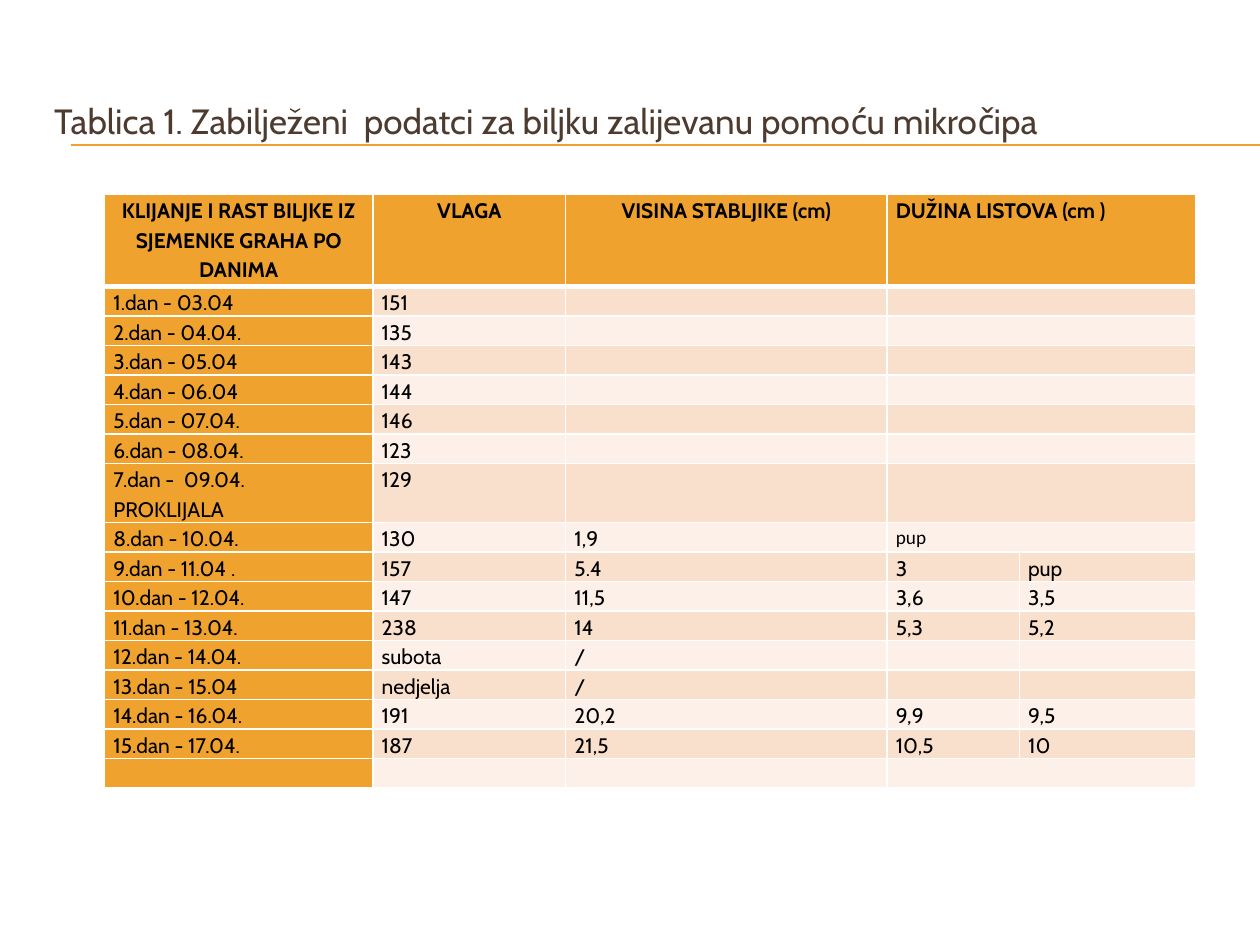
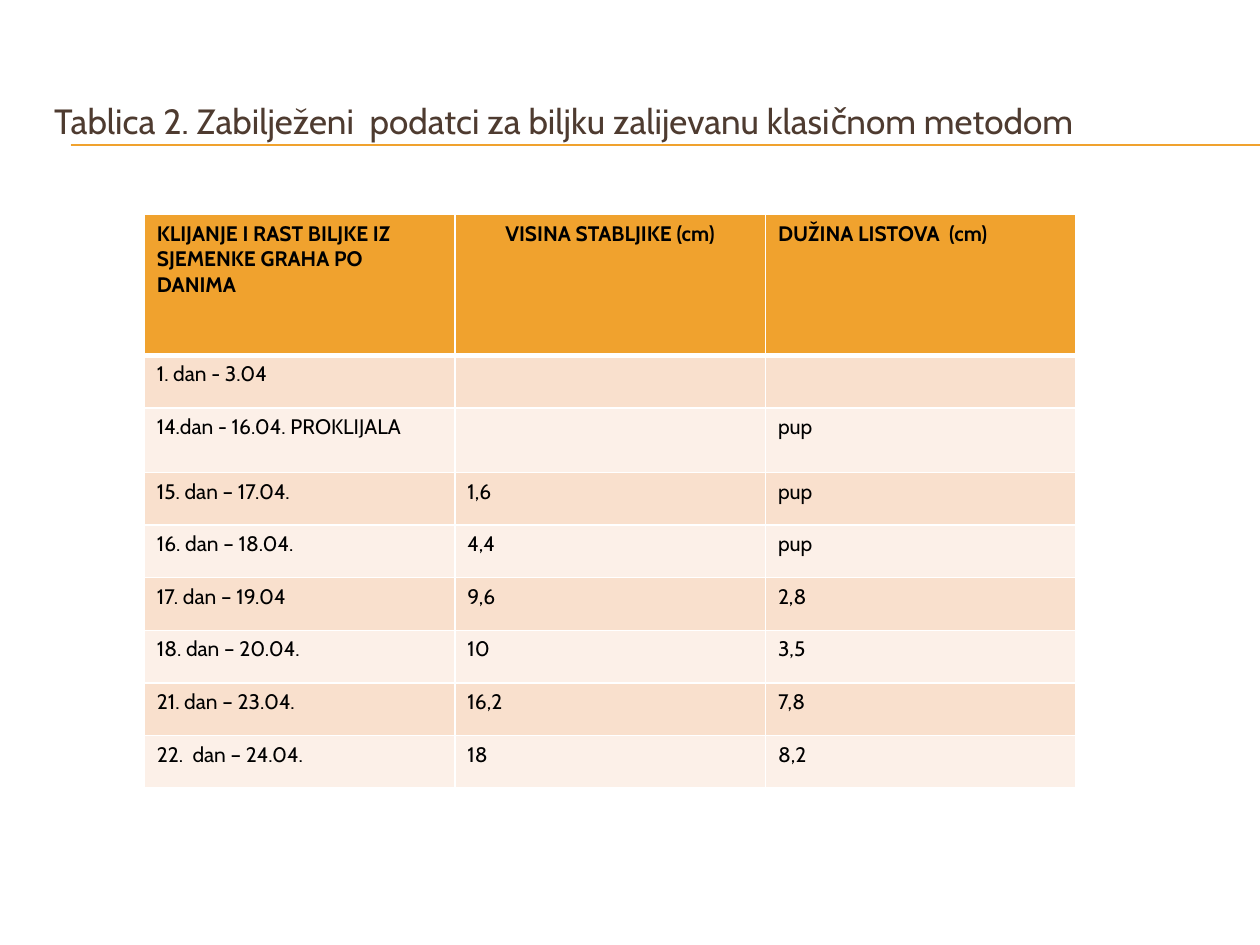
from dataclasses import dataclass

from lxml.etree import SubElement
from pptx import Presentation
from pptx.dml.color import RGBColor
from pptx.enum.shapes import MSO_CONNECTOR as Connector
from pptx.enum.text import MSO_ANCHOR as Anchor, PP_ALIGN as Align
from pptx.oxml.ns import qn
from pptx.util import Inches, Pt

WIDTH, HEIGHT = Inches(10), Inches(7.5)
TITLE_ONLY = 5


@dataclass(frozen=True)
class Theme:
    font: str = "Cabin"
    note_font: str = "Calibri"
    title_size: int = 20
    table_size: int = 12
    note_size: int = 11
    title: str = "4E3B30"
    text: str = "000000"
    accent: str = "F0A22E"
    bands: tuple = ("F9E0CD", "FCF0E8")
    border: str = "FFFFFF"
    border_width: float = 1
    header_rule: float = 3
    title_rule: float = 0.75


@dataclass(frozen=True)
class TableLook:
    """Place, columns and rows in percent of the slide; insets in inches."""
    left: float
    top: float
    columns: tuple
    rows: tuple
    inset: tuple
    line_spacing: float
    centred_headers: tuple
    accent_days: bool


THEME = Theme()

# Bean watered with the help of the microchip
WATERED_HEADER = ("KLIJANJE I RAST BILJKE IZ SJEMENKE GRAHA PO DANIMA", "VLAGA",
                  "VISINA STABLJIKE (cm)", "DUŽINA LISTOVA (cm )")
WATERED_DAYS = [
    ("1.dan - 03.04", "151", "", ""),
    ("2.dan - 04.04.", "135", "", ""),
    ("3.dan - 05.04", "143", "", ""),
    ("4.dan - 06.04", "144", "", ""),
    ("5.dan - 07.04.", "146", "", ""),
    ("6.dan - 08.04.", "123", "", ""),
    ("7.dan -  09.04.  PROKLIJALA", "129", "", ""),
    ("8.dan - 10.04.", "130", "1,9", "pup"),
    ("9.dan - 11.04 .", "157", "5.4", "3", "pup"),
    ("10.dan - 12.04.", "147", "11,5", "3,6", "3,5"),
    ("11.dan - 13.04.", "238", "14", "5,3", "5,2"),
    ("12.dan - 14.04.", "subota", "/", "", ""),
    ("13.dan - 15.04", "nedjelja", "/", "", ""),
    ("14.dan - 16.04.", "191", "20,2", "9,9", "9,5"),
    ("15.dan - 17.04.", "187", "21,5", "10,5", "10"),
    ("", "", "", ""),
]
WATERED_LOOK = TableLook(
    left=8.3, top=20.6, columns=(21.3, 15.3, 25.5, 10.5, 14),
    rows=(9.7,) + (3.12,) * 6 + (6.25,) + (3.12,) * 9,
    inset=(0.07, 0), line_spacing=1.15, centred_headers=(0, 1, 2), accent_days=True)

# Bean watered in the classic way
CLASSIC_HEADER = ("KLIJANJE I RAST BILJKE IZ SJEMENKE GRAHA PO DANIMA",
                  "VISINA STABLJIKE (cm)", "DUŽINA LISTOVA  (cm)")
CLASSIC_DAYS = [
    ("1. dan - 3.04", "", ""),
    ("14.dan - 16.04. PROKLIJALA", "", "pup"),
    ("15. dan – 17.04.", "1,6", "pup"),
    ("16. dan – 18.04.", "4,4", "pup"),
    ("17. dan – 19.04", "9,6", "2,8"),
    ("18. dan – 20.04.", "10", "3,5"),
    ("21. dan – 23.04.", "16,2", "7,8"),
    ("22.  dan – 24.04.", "18", "8,2"),
]
CLASSIC_LOOK = TableLook(
    left=11.45, top=22.7, columns=(24.65,) * 3,
    rows=(14.9, 5.6, 6.8) + (5.57,) * 6,
    inset=(0.1, 0.05), line_spacing=1, centred_headers=(1,), accent_days=False)


def across(percent):
    return round(WIDTH * percent / 100)


def down(percent):
    return round(HEIGHT * percent / 100)


def rgb(colour):
    return RGBColor.from_string(colour)


def add_run(paragraph, words, size, colour, font=THEME.font, bold=False):
    run = paragraph.add_run()
    run.text = words
    run.font.name, run.font.size, run.font.bold = font, Pt(size), bold
    run.font.color.rgb = rgb(colour)


def add_title(slide, words):
    title = slide.shapes.title
    title.left, title.top = across(3.3), down(6.6)
    title.width, title.height = across(95), down(12.27)
    title.text_frame.vertical_anchor = Anchor.MIDDLE
    heading = title.text_frame.paragraphs[0]
    heading.alignment = Align.LEFT
    add_run(heading, words, THEME.title_size, THEME.title)


def add_title_rules(slide):
    for level in (15.33, 15.4):
        rule = slide.shapes.add_connector(
            Connector.STRAIGHT, across(5.6), down(level), WIDTH, down(level))
        rule.line.color.rgb = rgb(THEME.accent)
        rule.line.width = Pt(THEME.title_rule)
        SubElement(rule._element.spPr, qn("a:effectLst"))


def set_borders(cell, top, bottom):
    properties = cell._tc.get_or_add_tcPr()
    widths = {"L": THEME.border_width, "R": THEME.border_width, "T": top, "B": bottom}
    for side, width in widths.items():
        edge = SubElement(properties, qn(f"a:ln{side}"), w=str(Pt(width)))
        fill = SubElement(edge, qn("a:solidFill"))
        SubElement(fill, qn("a:srgbClr"), val=THEME.border)


def format_cell(cell, look, row, column):
    thin, thick = THEME.border_width, THEME.header_rule
    set_borders(cell, thick if row == 1 else thin, thick if row == 0 else thin)
    accented = row == 0 or (look.accent_days and column == 0)
    cell.fill.solid()
    cell.fill.fore_color.rgb = rgb(THEME.accent if accented else THEME.bands[(row - 1) % 2])
    side, end = (Inches(inset) for inset in look.inset)
    cell.margin_left = cell.margin_right = side
    cell.margin_top = cell.margin_bottom = end


def write_cell(cell, words, look, row, column):
    entry = cell.text_frame.paragraphs[0]
    entry.line_spacing = look.line_spacing
    centred = row == 0 and column in look.centred_headers
    entry.alignment = Align.CENTER if centred else Align.LEFT
    if not words:  # keeps an empty row as low as a written one
        SubElement(entry._p, qn("a:endParaRPr"), sz=str(THEME.table_size * 100))
    elif look is WATERED_LOOK and (row, column) == (8, 3):  # first bud, set apart
        add_run(entry, words, THEME.note_size, THEME.text, THEME.note_font)
    else:
        add_run(entry, words, THEME.table_size, THEME.text, bold=row == 0)


def add_growth_table(slide, header, days, look):
    records = [header, *days]
    count = len(look.columns)
    growth = slide.shapes.add_table(
        len(records), count, across(look.left), down(look.top),
        across(sum(look.columns)), down(sum(look.rows))).table
    growth.first_row = growth.horz_banding = False
    for column, share in zip(growth.columns, look.columns):
        column.width = across(share)
    for row, (record, share) in enumerate(zip(records, look.rows)):
        growth.rows[row].height = down(share)
        for column in range(count):
            cell = growth.cell(row, column)
            format_cell(cell, look, row, column)
            words = record[column] if column < len(record) else ""
            write_cell(cell, words, look, row, column)
        # A record that is one value short spans the last two columns
        if len(record) < count:
            growth.cell(row, count - 2).merge(growth.cell(row, count - 1))


def add_growth_slide(deck, title, header, days, look):
    slide = deck.slides.add_slide(deck.slide_layouts[TITLE_ONLY])
    add_title_rules(slide)
    add_title(slide, title)
    add_growth_table(slide, header, days, look)


def main():
    deck = Presentation()
    deck.slide_width, deck.slide_height = WIDTH, HEIGHT
    add_growth_slide(
        deck, "Tablica 1. Zabilježeni  podatci za biljku zalijevanu pomoću mikročipa",
        WATERED_HEADER, WATERED_DAYS, WATERED_LOOK)
    add_growth_slide(
        deck, "Tablica 2. Zabilježeni  podatci za biljku zalijevanu klasičnom metodom",
        CLASSIC_HEADER, CLASSIC_DAYS, CLASSIC_LOOK)
    deck.save("out.pptx")


if __name__ == "__main__":
    main()
